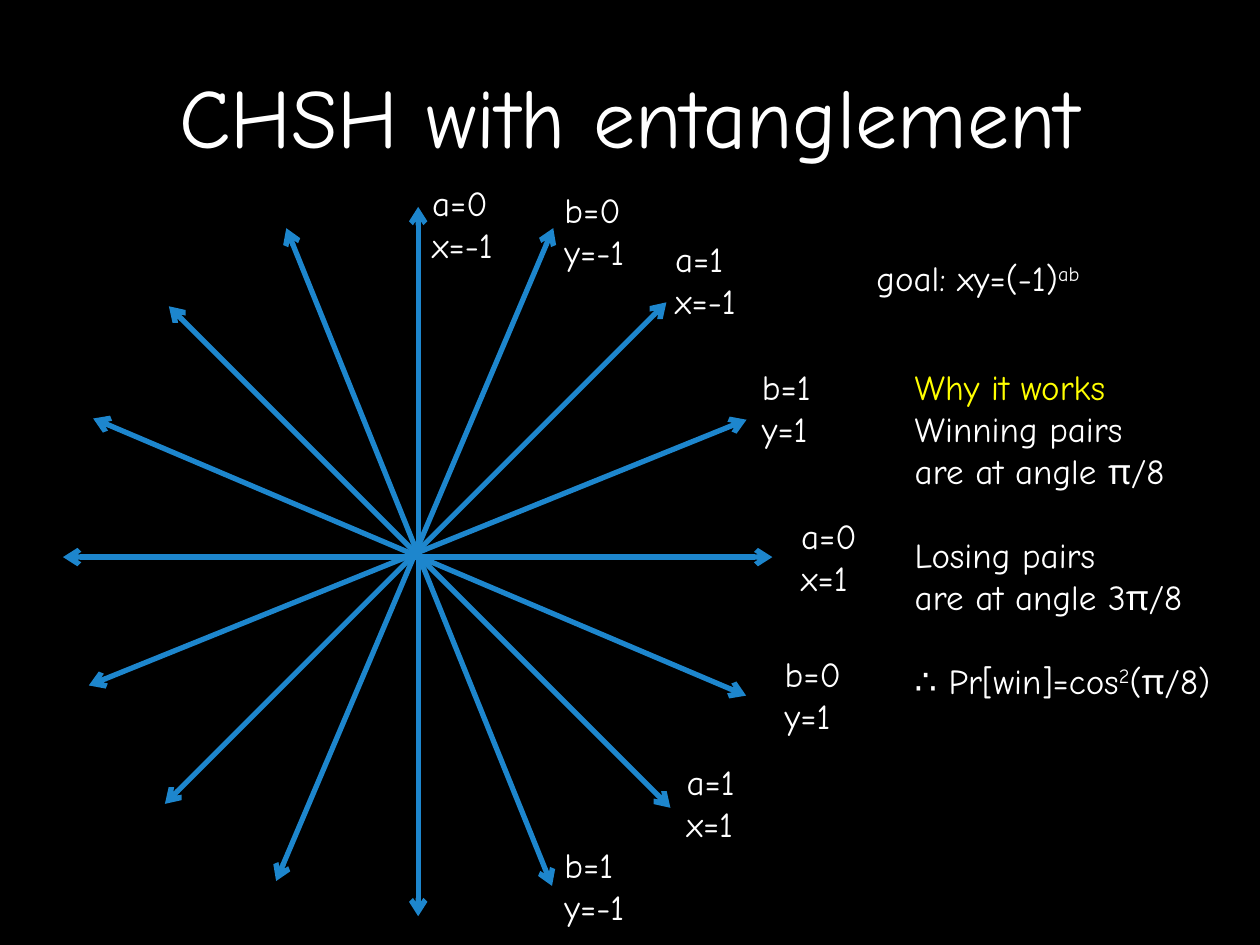
import math
from dataclasses import dataclass

import pptx
import pptx.dml.color
import pptx.enum.shapes
import pptx.enum.text
import pptx.oxml.ns
import pptx.util
from lxml import etree

Cm = pptx.util.Cm
Pt = pptx.util.Pt
RGB = pptx.dml.color.RGBColor
ENUM = pptx.enum.text


@dataclass(frozen=True)
class Theme:
    font: str = "Comic Neue"
    back: RGB = RGB(0, 0, 0)
    ink: RGB = RGB(255, 255, 255)
    mark: RGB = RGB(255, 255, 0)
    ray: RGB = RGB(0x1D, 0x86, 0xCD)
    head: int = 48
    body: int = 20
    gap: int = 24
    width: int = 3


@dataclass(frozen=True)
class Line:
    text: str  # parts between ^ marks alternate normal and raised
    color: RGB
    size: int
    gap: int = 0


@dataclass(frozen=True)
class Box:
    left: float
    top: float
    width: float
    height: float
    lines: tuple[Line, ...]
    title: bool = False


THEME = Theme()


def body(text: str, gap: int = 0, color: RGB = THEME.ink) -> Line:
    return Line(text, color, THEME.body, gap)


def label(left: float, top: float, width: float, *words: str) -> Box:
    return Box(left, top, width, 1.96, tuple(body(word) for word in words))


# Rays: a half turn in steps of pi/8, each with its own centre in cm
HALF = 7.15
HUBS = [(8.42, 11.23), (8.42, 11.14), (8.38, 11.15), (8.36, 11.18),
        (8.43, 11.32), (8.45, 11.23), (8.46, 11.23), (8.46, 11.23)]

# Outcomes beside the rays
LABELS = [
    label(8.46, 3.53, 1.85, "a=0", "x=-1"),
    label(11.13, 3.68, 1.85, "b=0", "y=-1"),
    label(13.36, 4.67, 1.85, "a=1", "x=-1"),
    label(15.11, 7.24, 1.52, "b=1", "y=1"),
    label(11.13, 16.87, 1.85, "b=1", "y=-1"),
    label(15.9, 10.24, 1.65, "a=0", "x=1"),
    label(15.57, 13.03, 1.68, "b=0", "y=1"),
    label(13.59, 15.21, 1.52, "a=1", "x=1"),
]

# Title, goal and reasoning
TITLE = Box(1.9, 0.33, 21.59, 3.96,
            (Line("CHSH with entanglement", THEME.ink, THEME.head),), True)
GOAL = Box(17.42, 5.05, 5.03, 1.12, (body("goal: xy=(-1)^ab"),))
WHY = Box(18.19, 7.24, 6.91, 7.09, (
    body("Why it works", color=THEME.mark),
    body("Winning pairs"),
    body("are at angle π/8"),
    body("Losing pairs", THEME.gap),
    body("are at angle 3π/8"),
    body("∴ Pr[win]=cos^2^(π/8)", THEME.gap),
))


def draw_ray(slide, hub: tuple[float, float], angle: int) -> None:
    x, y = hub
    turn = math.radians(angle)
    dx, dy = HALF * math.cos(turn), HALF * math.sin(turn)
    ray = slide.shapes.add_connector(
        pptx.enum.shapes.MSO_CONNECTOR.STRAIGHT,
        Cm(x + dx), Cm(y - dy), Cm(x - dx), Cm(y + dy))
    ray.line.color.rgb = THEME.ray
    ray.line.width = Pt(THEME.width)
    qn = pptx.oxml.ns.qn
    stroke = ray.line._get_or_add_ln()
    for end in ("a:headEnd", "a:tailEnd"):
        etree.SubElement(stroke, qn(end), type="arrow")
    etree.SubElement(ray._element.spPr, qn("a:effectLst"))


def draw_text(slide, box: Box) -> None:
    shape = slide.shapes.add_textbox(
        Cm(box.left), Cm(box.top), Cm(box.width), Cm(box.height))
    frame = shape.text_frame
    frame.word_wrap = box.title
    if box.title:
        frame.vertical_anchor = ENUM.MSO_ANCHOR.MIDDLE
    else:
        frame.auto_size = ENUM.MSO_AUTO_SIZE.SHAPE_TO_FIT_TEXT
    for i, line in enumerate(box.lines):
        para = frame.add_paragraph() if i else frame.paragraphs[0]
        para.alignment = (ENUM.PP_ALIGN.CENTER if box.title
                          else ENUM.PP_ALIGN.LEFT)
        if line.gap:
            para.space_before = Pt(line.gap)
        para.font.name = THEME.font
        para.font.size = Pt(line.size)
        para.font.color.rgb = line.color
        for j, part in enumerate(line.text.split("^")):
            run = para.add_run()
            run.text = part
            if j % 2:
                run._r.get_or_add_rPr().set("baseline", "30000")


def main() -> None:
    deck = pptx.Presentation()
    deck.slide_width, deck.slide_height = Cm(25.4), Cm(19.05)
    slide = deck.slides.add_slide(deck.slide_layouts[6])
    slide.background.fill.solid()
    slide.background.fill.fore_color.rgb = THEME.back

    draw_text(slide, TITLE)
    for step, hub in enumerate(HUBS):
        draw_ray(slide, hub, int(22.5 * step))
    for box in [*LABELS, WHY, GOAL]:
        draw_text(slide, box)
    deck.save("out.pptx")


if __name__ == "__main__":
    main()
